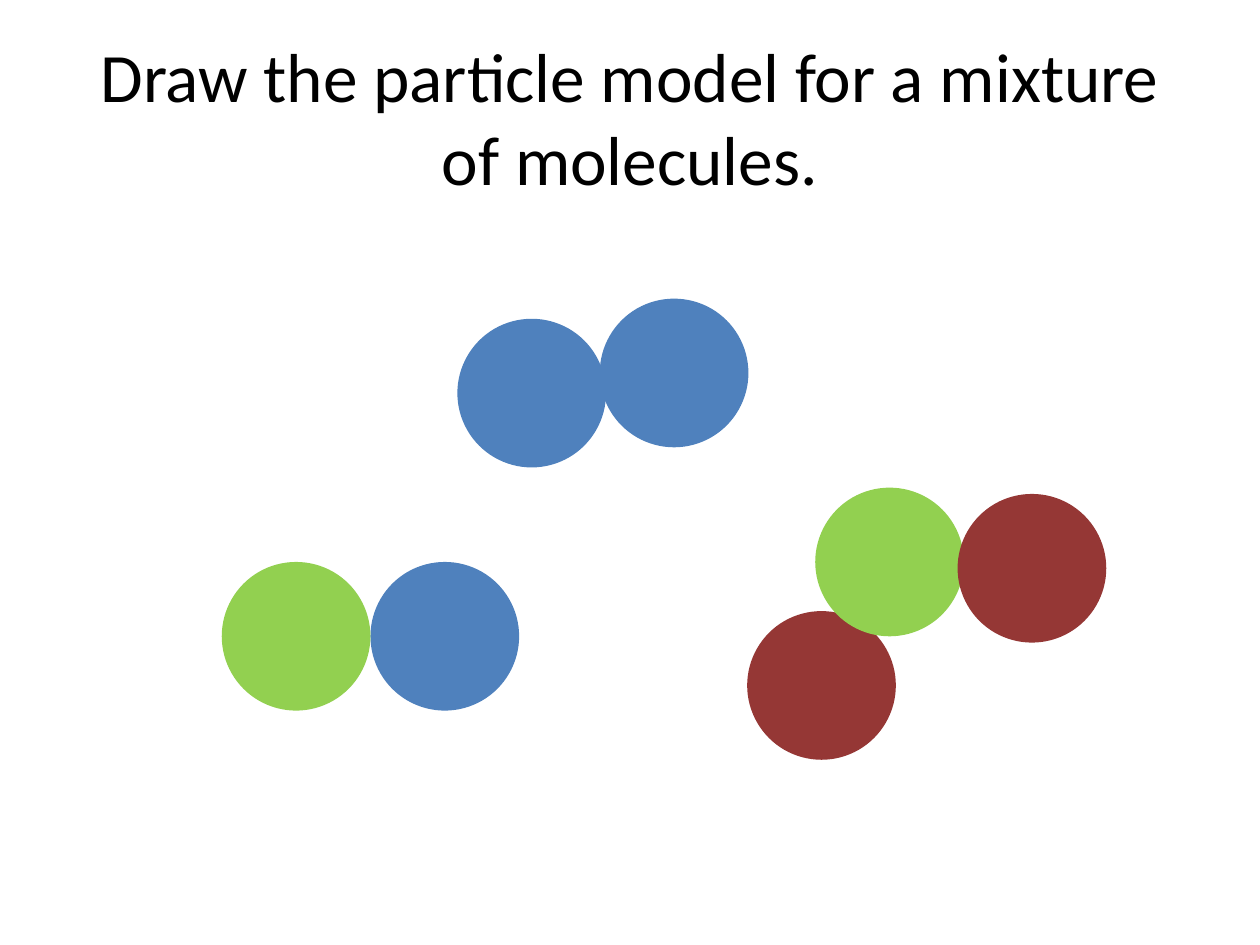
import pptx
import pptx.util
import pptx.dml.color
import pptx.enum.shapes
import pptx.enum.text

Inches = pptx.util.Inches
RGBColor = pptx.dml.color.RGBColor

BLACK = RGBColor(0x00, 0x00, 0x00)
BLUE = RGBColor(0x4F, 0x81, 0xBD)
GREEN = RGBColor(0x92, 0xD0, 0x50)
RED = RGBColor(0x95, 0x37, 0x35)

ATOM_SIZE = 1.18

# Each molecule lists its atoms from back to front: left, top, colour
MOLECULES = [
    [(3.63, 2.53, BLUE), (4.76, 2.37, BLUE)],
    [(2.94, 4.46, BLUE), (1.76, 4.46, GREEN)],
    [(5.93, 4.85, RED), (6.47, 3.87, GREEN), (7.6, 3.92, RED)],
]


def set_title(s, text):
    sp = s.shapes.title
    sp.left, sp.top = Inches(0.5), Inches(0.3)
    sp.width, sp.height = Inches(9), Inches(1.25)
    tf = sp.text_frame
    tf.word_wrap = True
    tf.auto_size = pptx.enum.text.MSO_AUTO_SIZE.NONE
    tf.vertical_anchor = pptx.enum.text.MSO_ANCHOR.MIDDLE
    p = tf.paragraphs[0]
    p.alignment = pptx.enum.text.PP_ALIGN.CENTER
    r = p.add_run()
    r.text = text
    r.font.name = "Calibri"
    r.font.size = pptx.util.Pt(39.6)
    r.font.color.rgb = BLACK


def add_atom(s, left, top, color):
    sp = s.shapes.add_shape(
        pptx.enum.shapes.MSO_SHAPE.OVAL,
        Inches(left), Inches(top), Inches(ATOM_SIZE), Inches(ATOM_SIZE))
    sp.shadow.inherit = False
    sp.fill.solid()
    sp.fill.fore_color.rgb = color
    sp.line.fill.background()


def main():
    prs = pptx.Presentation()
    prs.slide_width, prs.slide_height = Inches(10), Inches(7.5)
    s = prs.slides.add_slide(prs.slide_layouts[5])  # title only

    set_title(s, "Draw the particle model for a mixture of molecules.")

    # Molecules
    for atoms in MOLECULES:
        for left, top, color in atoms:
            add_atom(s, left, top, color)

    prs.save("out.pptx")


if __name__ == "__main__":
    main()
